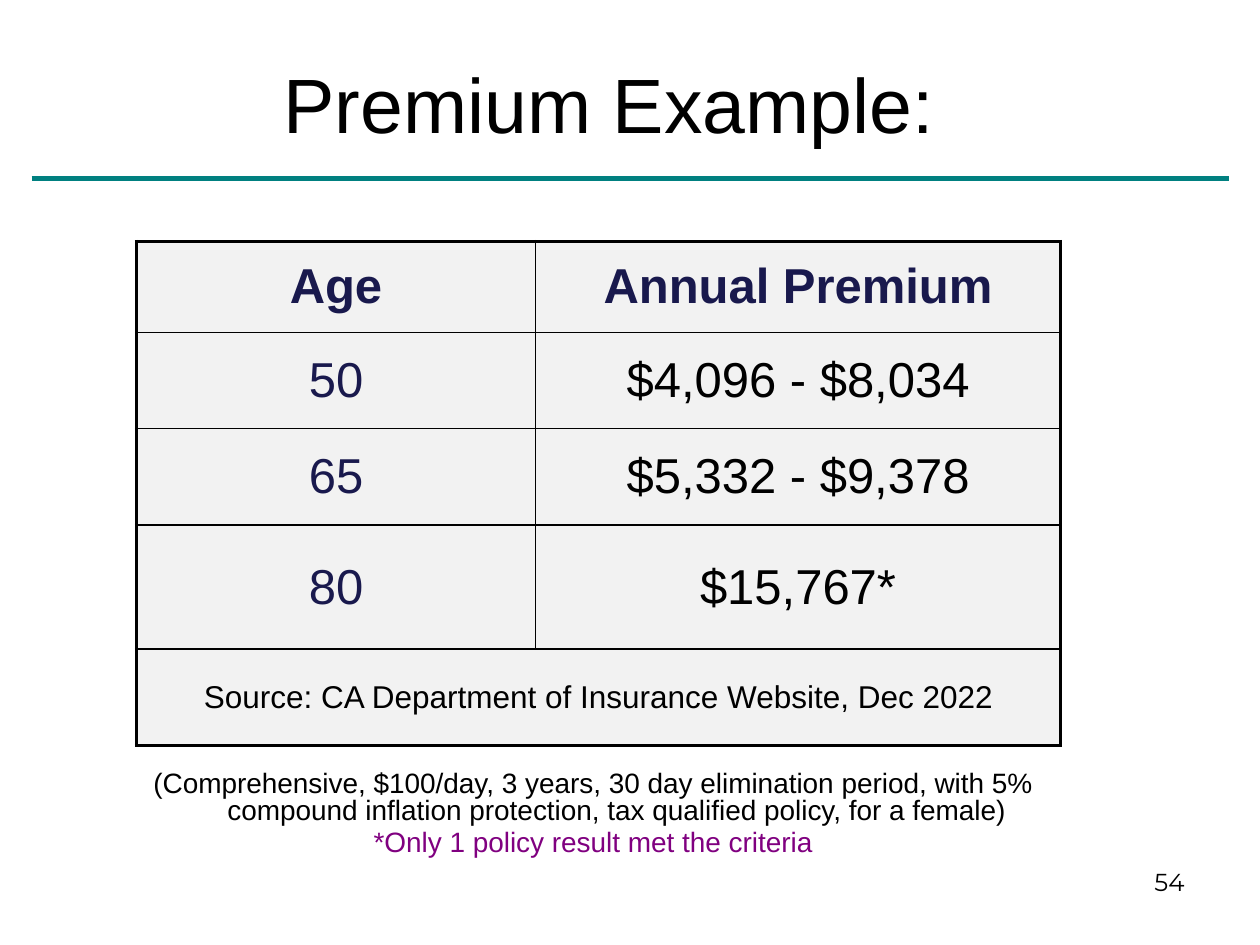
from lxml.etree import SubElement
from pptx import Presentation
from pptx.dml.color import RGBColor
from pptx.enum.shapes import MSO_CONNECTOR
from pptx.enum.text import MSO_ANCHOR, PP_ALIGN
from pptx.oxml.ns import qn
from pptx.util import Pt

COLORS = {
    "black": "000000",
    "navy": "19194D",
    "teal": "008080",
    "purple": "800080",
    "cell": "F2F2F2",
}
PREMIUMS = [
    ("Age", "Annual Premium"),
    ("50", "$4,096 - $8,034"),
    ("65", "$5,332 - $9,378"),
    ("80", "$15,767*"),
]
SOURCE = "Source: CA Department of Insurance Website, Dec 2022"
COLUMN_WIDTHS = [228, 300]
ROW_HEIGHTS = [52, 55, 55, 71, 55]
THIN, THICK = 1, 2.25


def color(name):
    return RGBColor.from_string(COLORS[name])


def format_paragraph(paragraph, size, color_name, align=PP_ALIGN.CENTER,
                     font="Arial", bold=False):
    paragraph.alignment = align
    for run in paragraph.runs:
        run.font.size = Pt(size)
        run.font.name = font
        run.font.bold = bold
        run.font.color.rgb = color(color_name)


def add_text(slide, left, top, width, height, lines):
    frame = slide.shapes.add_textbox(
        Pt(left), Pt(top), Pt(width), Pt(height)).text_frame
    frame.word_wrap = True
    frame.text = "\n".join(lines)
    return frame


def add_rule(slide, left, right, y):
    rule = slide.shapes.add_connector(
        MSO_CONNECTOR.STRAIGHT, Pt(left), Pt(y), Pt(right), Pt(y))
    rule.line.color.rgb = color("teal")
    rule.line.width = Pt(3)
    SubElement(rule._element.spPr, qn("a:effectLst"))


def set_borders(cell, widths):
    """Draw the left, right, top and bottom borders ahead of the cell fill."""
    properties = cell._tc.get_or_add_tcPr()
    for index, (side, width) in enumerate(zip("LRTB", widths)):
        border = SubElement(properties, qn(f"a:ln{side}"), w=str(Pt(width)))
        fill = SubElement(border, qn("a:solidFill"))
        SubElement(fill, qn("a:srgbClr"), val=COLORS["black"])
        properties.insert(index, border)


def fill_cell(cell, text, size, color_name, bold=False):
    cell.text = text
    cell.vertical_anchor = MSO_ANCHOR.MIDDLE
    cell.fill.solid()
    cell.fill.fore_color.rgb = color("cell")
    format_paragraph(cell.text_frame.paragraphs[0], size, color_name, bold=bold)


def add_premium_table(slide, left, top):
    table = slide.shapes.add_table(
        len(ROW_HEIGHTS), len(COLUMN_WIDTHS), Pt(left), Pt(top),
        Pt(sum(COLUMN_WIDTHS)), Pt(sum(ROW_HEIGHTS))).table
    for column, width in zip(table.columns, COLUMN_WIDTHS):
        column.width = Pt(width)
    for row, height in zip(table.rows, ROW_HEIGHTS):
        row.height = Pt(height)

    # Ages and premiums
    for r, premium_row in enumerate(PREMIUMS):
        for c, text in enumerate(premium_row):
            is_navy = r == 0 or c == 0
            fill_cell(table.cell(r, c), text, 28,
                      "navy" if is_navy else "black", bold=r == 0)

    # Source row across both columns
    source_row = len(PREMIUMS)
    source = table.cell(source_row, 0)
    source.merge(table.cell(source_row, 1))
    fill_cell(source, SOURCE, 18, "black")

    # Thick frame, thin inner lines
    for r in range(len(ROW_HEIGHTS)):
        for c in range(len(COLUMN_WIDTHS)):
            on_frame = (c == 0, c == 1 or r == source_row,
                        r == 0, r == source_row)
            set_borders(table.cell(r, c),
                        [THICK if edge else THIN for edge in on_frame])


def add_policy_notes(slide):
    notes = add_text(slide, 66, 414, 546, 72, [
        "(Comprehensive, $100/day, 3 years, 30 day elimination period, with 5% "
        "compound inflation protection, tax qualified policy, for a female)",
        "*Only 1 policy result met the criteria",
    ])
    notes.margin_top = Pt(27)
    for paragraph, color_name in zip(notes.paragraphs, ("black", "purple")):
        format_paragraph(paragraph, 16, color_name)
        paragraph.line_spacing = 0.8
        indent = paragraph._p.get_or_add_pPr()
        indent.set("marL", str(Pt(27)))
        indent.set("indent", str(Pt(-27)))
    notes.paragraphs[1].space_before = Pt(3.2)


def main():
    presentation = Presentation()
    presentation.slide_width, presentation.slide_height = Pt(720), Pt(540)
    slide = presentation.slides.add_slide(presentation.slide_layouts[6])

    # Page number
    page_number = add_text(slide, 516, 492, 168, 37, ["54"])
    format_paragraph(page_number.paragraphs[0], 14, "black",
                     PP_ALIGN.RIGHT, "Montserrat")

    # Title and rule
    title = add_text(slide, 42, 30, 612, 78, ["Premium Example:"])
    title.vertical_anchor = MSO_ANCHOR.MIDDLE
    title.margin_bottom = Pt(24)
    format_paragraph(title.paragraphs[0], 44, "black")
    add_rule(slide, 18, 702, 102)

    # Premiums and their conditions
    add_premium_table(slide, 78, 138)
    add_policy_notes(slide)

    presentation.save("out.pptx")


if __name__ == "__main__":
    main()
